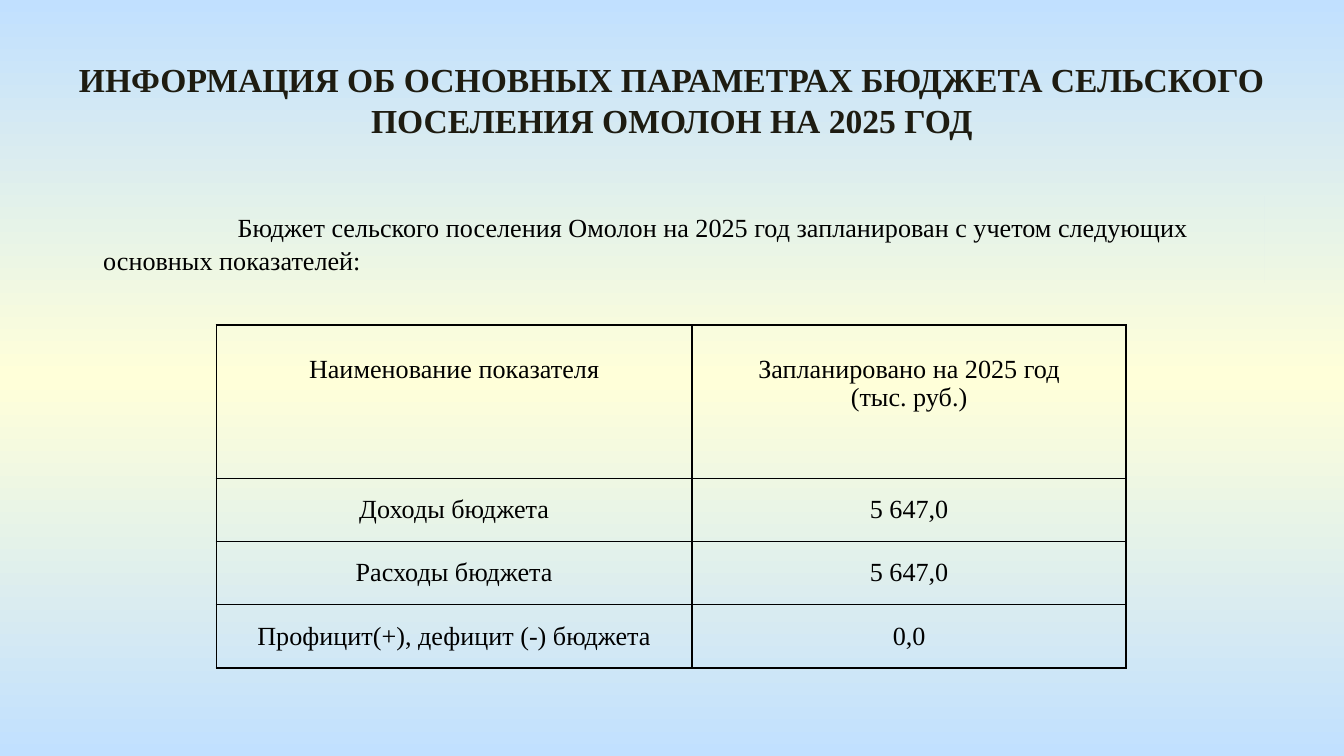
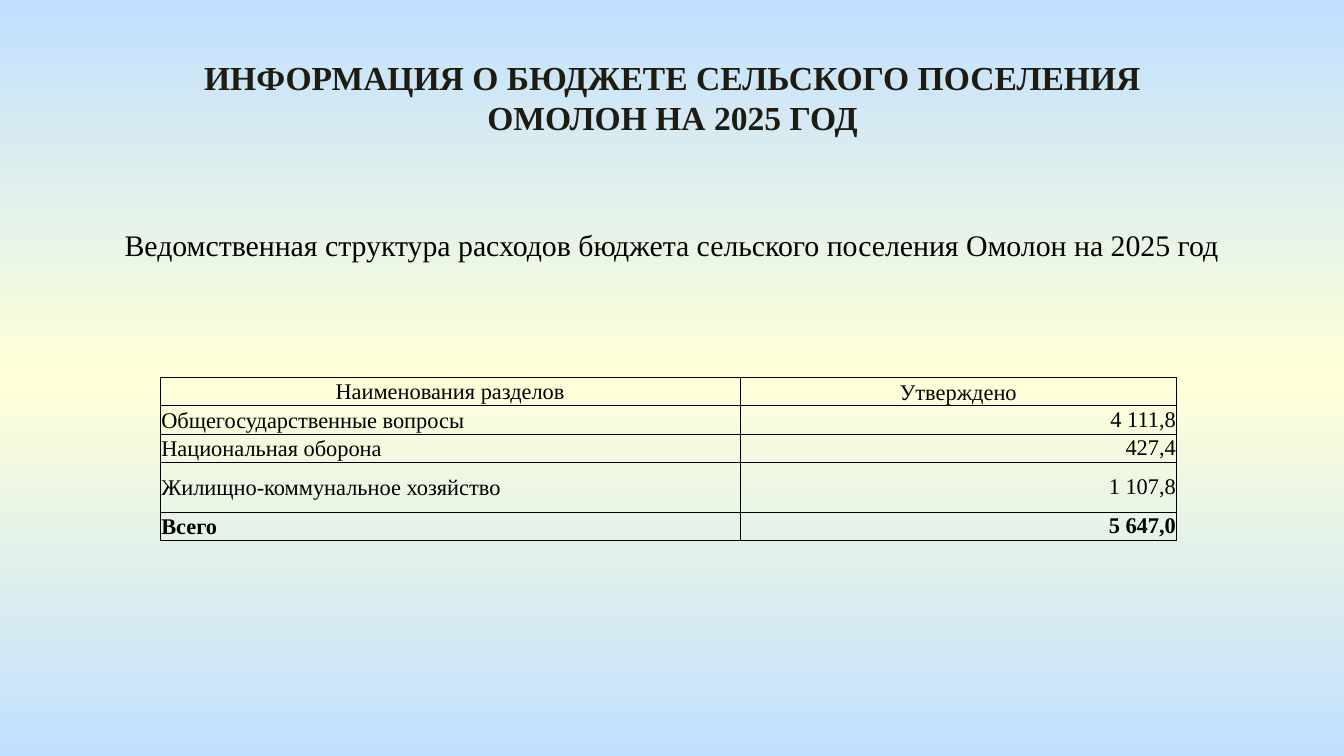
import copy

import pptx
import pptx.dml.color
import pptx.enum.shapes
import pptx.enum.text
import pptx.oxml
import pptx.oxml.ns
import pptx.util

Inches = pptx.util.Inches
Pt = pptx.util.Pt
ALIGN = pptx.enum.text.PP_ALIGN
ANCHOR = pptx.enum.text.MSO_ANCHOR
qn = pptx.oxml.ns.qn

COLORS = {"sky": "C1E0FF", "cream": "FFFFD9", "title": "1E1C11", "text": "000000"}
FONT = "Times New Roman"
BACKGROUND_STOPS = [(0, "sky"), (0.5, "cream"), (1, "sky")]
TITLE_SIZE = 18


def rgb(name):
    return pptx.dml.color.RGBColor.from_string(COLORS[name])


def place(shape, box):
    shape.left, shape.top, shape.width, shape.height = map(Inches, box)


def write(frame, text, size, align, color="text", bold=False):
    frame.text = text
    for paragraph in frame.paragraphs:
        paragraph.alignment = align
        for run in paragraph.runs:
            run.font.name = FONT
            run.font.size = Pt(size)
            run.font.bold = bold
            run.font.color.rgb = rgb(color)


def paint_background(slide):
    fill = slide.background.fill
    fill.gradient()
    fill.gradient_angle = 270
    stop_list = slide.element.find(".//" + qn("a:gsLst"))
    stop_list.append(copy.deepcopy(stop_list[-1]))
    for stop, (position, color) in zip(fill.gradient_stops, BACKGROUND_STOPS):
        stop.position = position
        stop.color.rgb = rgb(color)


def add_titled_slide(prs, title, box):
    slide = prs.slides.add_slide(prs.slide_layouts[5])
    paint_background(slide)
    heading = slide.shapes.title
    place(heading, box)
    frame = heading.text_frame
    frame.word_wrap = True
    frame.auto_size = pptx.enum.text.MSO_AUTO_SIZE.NONE
    frame.vertical_anchor = ANCHOR.TOP
    write(frame, title, TITLE_SIZE, ALIGN.CENTER, "title", True)
    return slide


def add_intro(slide, text, box):
    intro = slide.shapes.add_shape(
        pptx.enum.shapes.MSO_SHAPE.RECTANGLE, *map(Inches, box))
    intro.element.set("useBgFill", "1")
    intro.line.fill.background()
    intro.shadow.inherit = False
    frame = intro.text_frame
    frame.word_wrap = True
    frame.vertical_anchor = ANCHOR.BOTTOM
    write(frame, text, 14, ALIGN.LEFT)
    paragraph = frame.paragraphs[0]
    paragraph.line_spacing = 1.05
    paragraph._p.get_or_add_pPr().set("indent", str(Inches(1)))


def add_subtitle(slide, text, box):
    subtitle = slide.shapes.add_textbox(*map(Inches, box))
    subtitle.text_frame.word_wrap = True
    write(subtitle.text_frame, text, 16, ALIGN.CENTER)


def set_borders(cell, width):
    properties = cell._tc.get_or_add_tcPr()
    for position, side in enumerate(("lnL", "lnR", "lnT", "lnB")):
        properties.insert(position, pptx.oxml.parse_xml(
            f'<a:{side} {pptx.oxml.ns.nsdecls("a")} w="{Pt(width)}">'
            f'<a:solidFill><a:srgbClr val="{COLORS["text"]}"/></a:solidFill>'
            f'</a:{side}>'))


def set_margins(cell, left, top, right, bottom):
    cell.margin_left, cell.margin_top = Inches(left), Inches(top)
    cell.margin_right, cell.margin_bottom = Inches(right), Inches(bottom)


def add_budget_table(slide, rows, origin, widths, heights, size, border,
                     margins, body_aligns, bold_total=False):
    table = slide.shapes.add_table(
        len(rows), len(widths), *map(Inches, origin),
        Inches(sum(widths)), Inches(sum(heights))).table
    table.first_row = False
    table.horz_banding = False
    for column, width in zip(table.columns, widths):
        column.width = Inches(width)
    for row, height in zip(table.rows, heights):
        row.height = Inches(height)
    for r, values in enumerate(rows):
        for c, value in enumerate(values):
            cell = table.cell(r, c)
            cell.fill.background()
            set_borders(cell, border)
            set_margins(cell, *margins)
            cell.vertical_anchor = ANCHOR.MIDDLE
            align = body_aligns[c] if r else ALIGN.CENTER
            bold = bold_total and r == len(rows) - 1
            write(cell.text_frame, value, size, align, bold=bold)
    return table


def build_parameters_slide(prs):
    slide = add_titled_slide(
        prs,
        "ИНФОРМАЦИЯ ОБ ОСНОВНЫХ ПАРАМЕТРАХ БЮДЖЕТА СЕЛЬСКОГО ПОСЕЛЕНИЯ ОМОЛОН НА 2025 ГОД",
        (0.35, 0.39, 9.3, 0.71))
    add_intro(
        slide,
        "Бюджет сельского поселения Омолон на 2025 год запланирован с учетом следующих основных показателей:",
        (0.67, 1.46, 8.74, 0.64))
    parameters = [
        ("Наименование показателя", "Запланировано на 2025 год\n(тыс. руб.)"),
        ("Доходы бюджета", "5 647,0"),
        ("Расходы бюджета", "5 647,0"),
        ("Профицит(+), дефицит (-) бюджета", "0,0"),
    ]
    table = add_budget_table(
        slide, parameters, (1.61, 2.42), (3.54, 3.23), [1.14] + [0.47] * 3,
        14, 1, (0.07, 0, 0.07, 0), (ALIGN.CENTER, ALIGN.CENTER))
    for header in table.rows[0].cells:
        header.vertical_anchor = ANCHOR.TOP
        header.margin_top = Inches(0.22)
    set_margins(table.cell(3, 1), 0.01, 0.01, 0.01, 0)


def build_expenses_slide(prs):
    slide = add_titled_slide(
        prs,
        "ИНФОРМАЦИЯ О БЮДЖЕТЕ СЕЛЬСКОГО ПОСЕЛЕНИЯ\nОМОЛОН НА 2025 ГОД",
        (0.63, 0.37, 8.75, 0.71))
    add_subtitle(
        slide,
        "Ведомственная структура расходов бюджета сельского поселения Омолон на 2025 год",
        (0, 1.64, 10, 0.37))
    expenses = [
        ("Наименования разделов", "Утверждено"),
        ("Общегосударственные вопросы", "4 111,8"),
        ("Национальная оборона", "427,4"),
        ("Жилищно-коммунальное хозяйство", "1 107,8"),
        ("Всего", "5 647,0"),
    ]
    table = add_budget_table(
        slide, expenses, (1.19, 2.81), (4.32, 3.24),
        (0.19, 0.2, 0.19, 0.37, 0.19), 12, 0.5, (0.01, 0.01, 0.01, 0),
        (ALIGN.LEFT, ALIGN.RIGHT), bold_total=True)
    table.cell(0, 1).vertical_anchor = ANCHOR.BOTTOM
    for r in range(1, len(expenses)):
        set_margins(table.cell(r, 1), 0, 0, 0, 0)


def main():
    prs = pptx.Presentation()
    prs.slide_width = Inches(10)
    prs.slide_height = prs.slide_width * 9 // 16
    build_parameters_slide(prs)
    build_expenses_slide(prs)
    prs.save("out.pptx")


if __name__ == "__main__":
    main()
